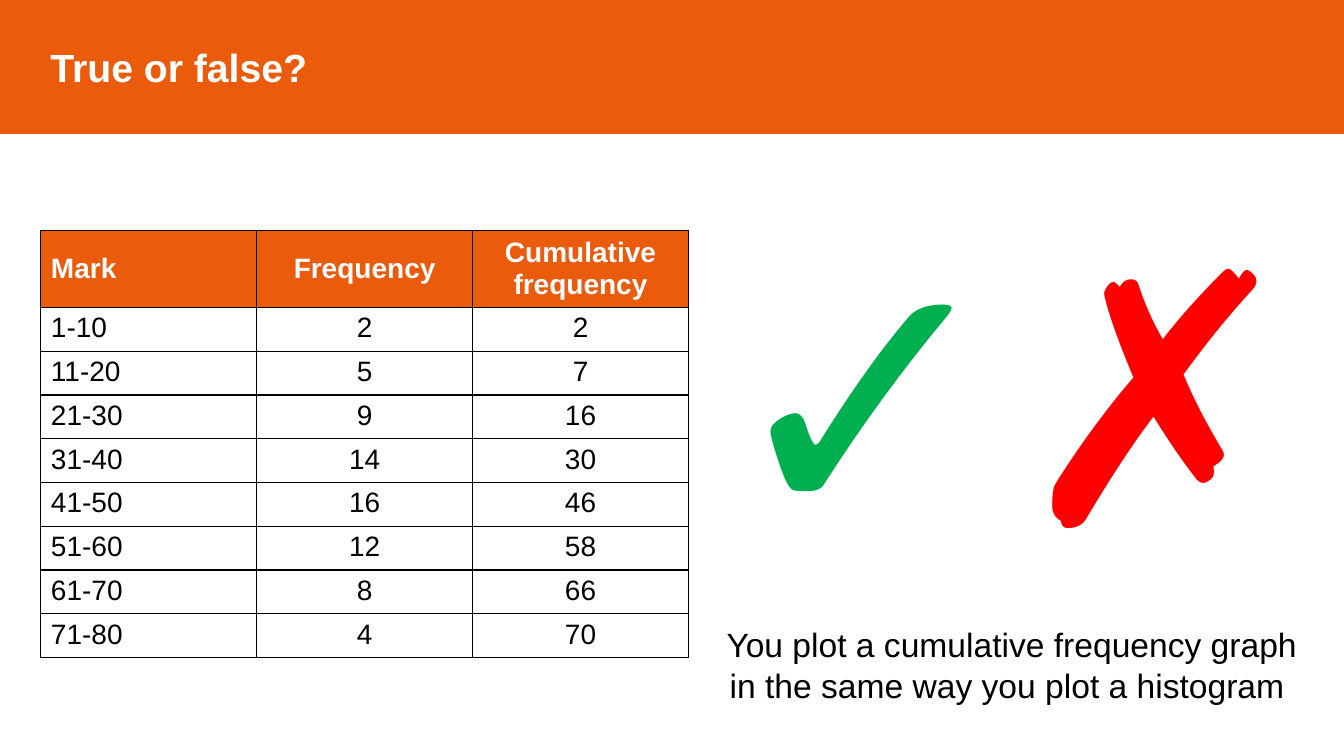
from dataclasses import dataclass

from lxml.etree import SubElement
from pptx import Presentation
from pptx.dml.color import RGBColor as RGB
from pptx.enum.text import MSO_ANCHOR as Anchor, MSO_AUTO_SIZE as AutoSize, PP_ALIGN as Align
from pptx.oxml.ns import qn
from pptx.util import Cm, Pt

COLORS = {
    "orange": "EA5B0C",
    "white": "FFFFFF",
    "black": "000000",
    "green": "00B050",
    "red": "FF0000",
}
FONT = "Arial"
HEADERS = ("Mark", "Frequency", "Cumulative frequency")


@dataclass
class MarkRow:
    mark: str
    frequency: int
    cumulative: int


ROWS = [
    MarkRow("1-10", 2, 2),
    MarkRow("11-20", 5, 7),
    MarkRow("21-30", 9, 16),
    MarkRow("31-40", 14, 30),
    MarkRow("41-50", 16, 46),
    MarkRow("51-60", 12, 58),
    MarkRow("61-70", 8, 66),
    MarkRow("71-80", 4, 70),
]


def color(name: str) -> RGB:
    return RGB.from_string(COLORS[name])


def add_text(p, text: str, *, size: float, fill: str = "black",
             bold: bool = False, align: Align = Align.CENTER) -> None:
    p.alignment = align
    r = p.add_run()
    r.text = text
    r.font.name = FONT
    r.font.size = Pt(size)
    r.font.bold = bold
    r.font.color.rgb = color(fill)


def add_borders(cell, line: str = "black", width: float = 1) -> None:
    tc_pr = cell._tc.get_or_add_tcPr()
    for side in ("a:lnL", "a:lnR", "a:lnT", "a:lnB"):
        ln = SubElement(tc_pr, qn(side), w=str(Pt(width)))
        solid = SubElement(ln, qn("a:solidFill"))
        SubElement(solid, qn("a:srgbClr"), val=COLORS[line])


def add_title(slide, text: str, width: int) -> None:
    sp = slide.shapes.title
    sp.left, sp.top, sp.width, sp.height = 0, 0, width, Cm(3.35)
    sp.fill.solid()
    sp.fill.fore_color.rgb = color("orange")
    sp.line.color.rgb = color("orange")
    sp.line.width = Pt(1)
    tf = sp.text_frame
    tf.auto_size = AutoSize.NONE
    tf.vertical_anchor = Anchor.MIDDLE
    tf.margin_left = Cm(1.27)
    add_text(tf.paragraphs[0], text, size=28, fill="white", bold=True, align=Align.LEFT)


def add_statement(slide, text: str) -> None:
    sp = slide.shapes.add_textbox(Cm(17.75), Cm(4.29), Cm(15.49), Cm(13.77))
    tf = sp.text_frame
    tf.word_wrap = True
    p = tf.paragraphs[0]
    for symbol, fill in (("✓", "green"), ("✗", "red")):
        add_text(p, symbol, size=250, fill=fill)
    p = tf.add_paragraph()
    p.space_before = Pt(20.7)
    add_text(p, text, size=24)


def add_marks_table(slide) -> None:
    header_h, row_h = Cm(1.94), Cm(1.1)
    frame = slide.shapes.add_table(len(ROWS) + 1, len(HEADERS), Cm(1.03), Cm(5.8),
                                   Cm(16.32), header_h + row_h * len(ROWS))
    table = frame.table
    table.first_row = table.horz_banding = False
    lines = [HEADERS] + [(m.mark, m.frequency, m.cumulative) for m in ROWS]
    for i, values in enumerate(lines):
        is_header = i == 0
        table.rows[i].height = header_h if is_header else row_h
        for j, value in enumerate(values):
            cell = table.cell(i, j)
            add_borders(cell)
            if is_header:
                cell.vertical_anchor = Anchor.MIDDLE
                cell.fill.solid()
                cell.fill.fore_color.rgb = color("orange")
            else:
                cell.fill.background()
            add_text(cell.text_frame.paragraphs[0], str(value), size=20, bold=is_header,
                     fill="white" if is_header else "black",
                     align=Align.LEFT if j == 0 else Align.CENTER)


def main() -> None:
    prs = Presentation()
    prs.slide_width, prs.slide_height = Cm(33.87), Cm(19.05)
    slide = prs.slides.add_slide(prs.slide_layouts[5])

    # Title band
    add_title(slide, "True or false?", prs.slide_width)

    # Tick, cross and the statement to judge
    add_statement(slide, "You plot a cumulative frequency graph in the same way "
                         "you plot a histogram ")

    # Frequency table
    add_marks_table(slide)

    prs.save("out.pptx")


if __name__ == "__main__":
    main()
